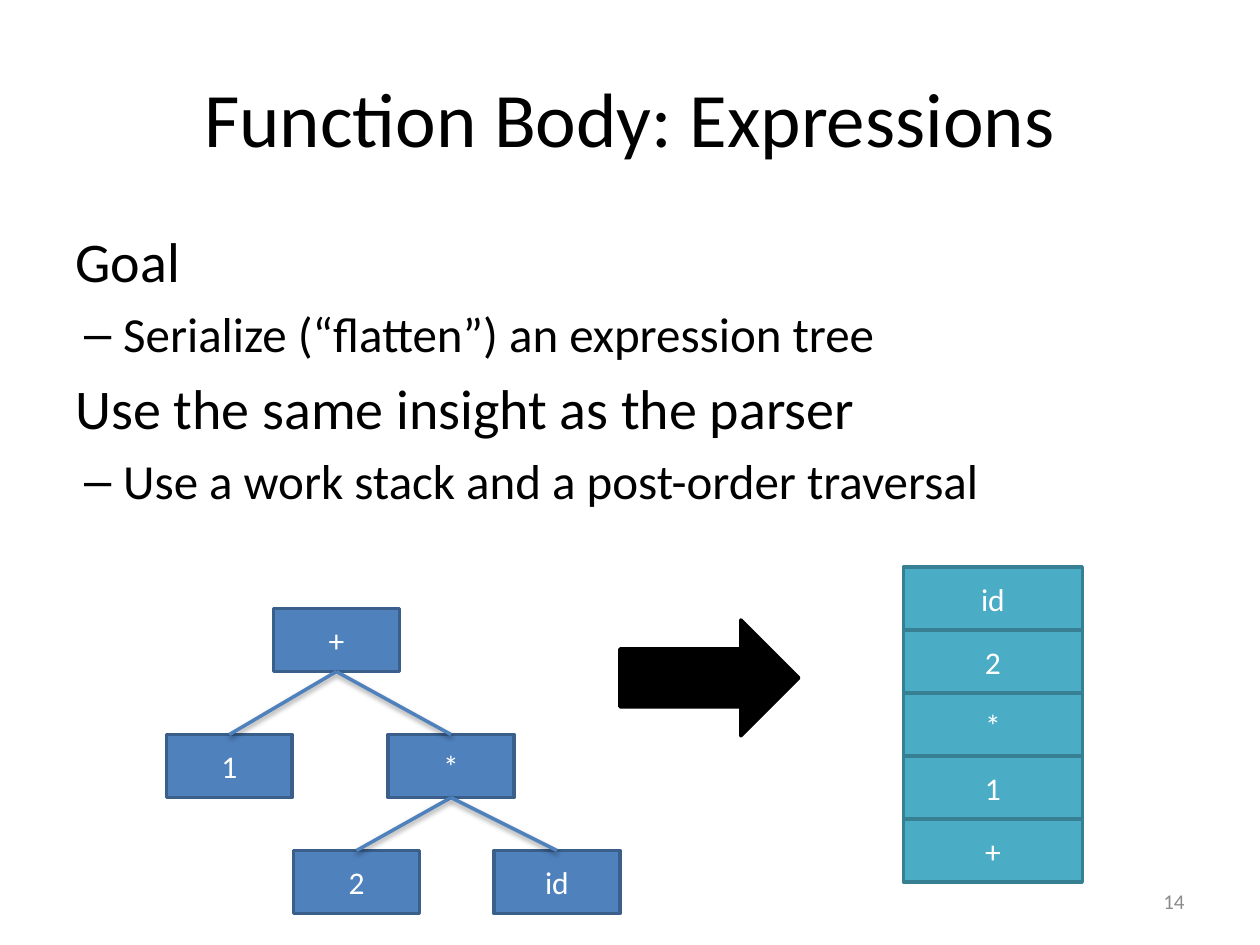
from lxml import etree
from pptx import Presentation
from pptx.dml.color import RGBColor
from pptx.enum.shapes import MSO_CONNECTOR, MSO_SHAPE
from pptx.enum.text import MSO_ANCHOR, PP_ALIGN
from pptx.oxml import parse_xml
from pptx.oxml.ns import qn
from pptx.util import Inches, Pt

RECTANGLE, RIGHT_ARROW = MSO_SHAPE.RECTANGLE, MSO_SHAPE.RIGHT_ARROW
STRAIGHT = MSO_CONNECTOR.STRAIGHT
TOP, MIDDLE = MSO_ANCHOR.TOP, MSO_ANCHOR.MIDDLE
LEFT, CENTER, RIGHT = PP_ALIGN.LEFT, PP_ALIGN.CENTER, PP_ALIGN.RIGHT
TOP_SIDE, BOTTOM_SIDE = 0, 2

BLACK, WHITE, GRAY = "000000", "FFFFFF", "8B8B8B"
BLUE, DARK_BLUE = "4F81BD", "3A5F8B"
TEAL, DARK_TEAL = "4BACC6", "377F92"

SOFT_SHADOW = (
    '<a:effectLst xmlns:a="http://schemas.openxmlformats.org/drawingml/2006/main">'
    '<a:outerShdw blurRad="40000" dist="20000" dir="5400000" rotWithShape="0">'
    '<a:srgbClr val="000000"><a:alpha val="38000"/></a:srgbClr>'
    "</a:outerShdw></a:effectLst>"
)


def color(hex_string):
    return RGBColor.from_string(hex_string)


class SlideBuilder:
    """Holds the style and the slide being filled."""

    font_name = "Calibri"
    line_width = Pt(2)

    def __init__(self, slide):
        self.slide = slide

    def add_run(self, paragraph, text, size, text_color):
        run = paragraph.add_run()
        run.text = text
        run.font.name = self.font_name
        run.font.size = Pt(size)
        run.font.color.rgb = color(text_color)

    def text_box(self, box, anchor=MIDDLE):
        frame = self.slide.shapes.add_textbox(*map(Inches, box)).text_frame
        frame.word_wrap = True
        frame.vertical_anchor = anchor
        return frame

    def label(self, box, text, size, alignment, text_color=BLACK):
        paragraph = self.text_box(box).paragraphs[0]
        paragraph.alignment = alignment
        self.add_run(paragraph, text, size, text_color)

    def outline(self, box, items):
        """Write (level, text) items; level 1 gets a dash bullet."""
        frame = self.text_box(box, TOP)
        for index, (level, text) in enumerate(items):
            paragraph = frame.add_paragraph() if index else frame.paragraphs[0]
            size = 28 if level else 32
            paragraph.alignment = LEFT
            paragraph.level = level
            paragraph.space_before = Pt(size * 0.2)
            if level:
                self.dash_bullet(paragraph)
            self.add_run(paragraph, text, size, BLACK)

    def dash_bullet(self, paragraph):
        properties = paragraph._p.get_or_add_pPr()
        properties.set("marL", str(Inches(0.38)))
        properties.set("indent", str(Inches(-0.31)))
        etree.SubElement(properties, qn("a:buFont")).set("typeface", "Arial")
        etree.SubElement(properties, qn("a:buChar")).set("char", "–")

    def block(self, box, fill, line, text="", preset=RECTANGLE):
        shape = self.slide.shapes.add_shape(preset, *map(Inches, box))
        shape.shadow.inherit = False
        shape.fill.solid()
        shape.fill.fore_color.rgb = color(fill)
        shape.line.color.rgb = color(line)
        shape.line.width = self.line_width
        if text:
            shape.text_frame.vertical_anchor = MIDDLE
            paragraph = shape.text_frame.paragraphs[0]
            paragraph.alignment = CENTER
            self.add_run(paragraph, text, 18, WHITE)
        return shape

    def branch(self, parent, child):
        connector = self.slide.shapes.add_connector(STRAIGHT, 0, 0, 0, 0)
        connector.begin_connect(parent, BOTTOM_SIDE)
        connector.end_connect(child, TOP_SIDE)
        connector.line.color.rgb = color(BLUE)
        connector.line.width = self.line_width
        connector._element.spPr.append(parse_xml(SOFT_SHADOW))


def main():
    presentation = Presentation()
    presentation.slide_width, presentation.slide_height = Inches(10), Inches(7.5)
    builder = SlideBuilder(presentation.slides.add_slide(presentation.slide_layouts[6]))

    builder.label((0.5, 0.3, 9, 1.25), "Function Body: Expressions", 44, CENTER)
    builder.outline((0.5, 1.75, 9, 4.95), [
        (0, "Goal"),
        (1, "Serialize (“flatten”) an expression tree"),
        (0, "Use the same insight as the parser"),
        (1, "Use a work stack and a post-order traversal"),
    ])

    tree_nodes = [
        ("+", 2.17, 4.83),
        ("1", 1.32, 5.83),
        ("*", 3.08, 5.83),
        ("2", 2.33, 6.75),
        ("id", 3.92, 6.75),
    ]
    nodes = {
        text: builder.block((left, top, 1, 0.5), BLUE, DARK_BLUE, text)
        for text, left, top in tree_nodes
    }

    row_height = 0.5
    for row, text in enumerate(["id", "2", "*", "1", "+"]):
        top = 4.5 + row * row_height
        builder.block((7.17, top, 1.42, row_height), TEAL, DARK_TEAL, text)

    builder.block((4.92, 4.92, 1.42, 0.92), BLACK, BLACK, preset=RIGHT_ARROW)

    for parent, child in ["+1", "+*", "*2", ("*", "id")]:
        builder.branch(nodes[parent], nodes[child])

    builder.label((7.17, 6.95, 2.33, 0.4), "14", 12, RIGHT, GRAY)
    presentation.save("out.pptx")


if __name__ == "__main__":
    main()
